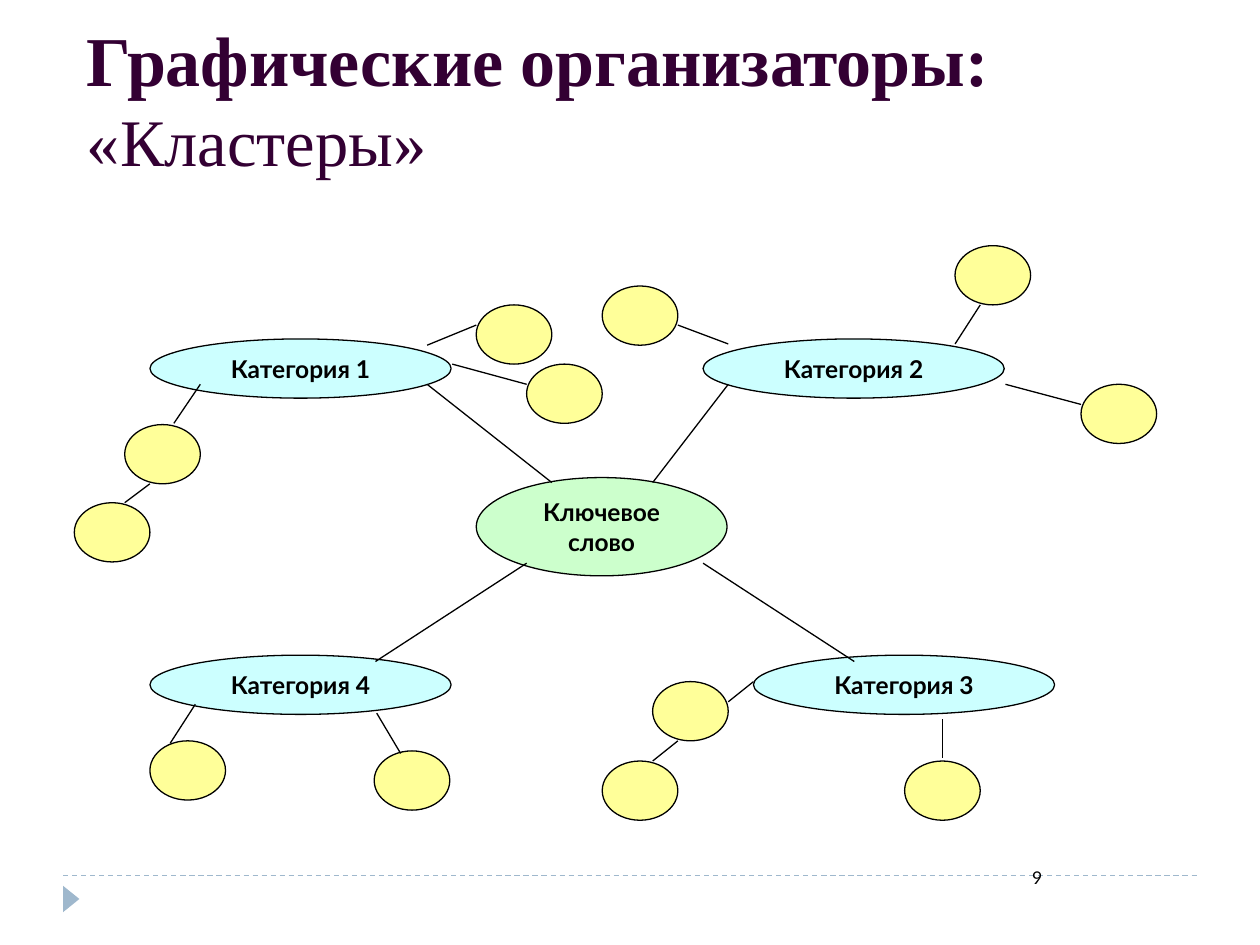
from pptx import Presentation
from pptx.dml.color import RGBColor
from pptx.enum.dml import MSO_LINE as Dash
from pptx.enum.shapes import MSO_CONNECTOR as Link, MSO_SHAPE as Kind
from pptx.enum.text import MSO_ANCHOR as Anchor, MSO_AUTO_SIZE as Fit, PP_ALIGN as Align
from pptx.util import Emu, Pt
from lxml.etree import SubElement

SCALE = 9144
HUES = {"ink": "000000", "title": "330033", "trim": "9FB8CD", "key": "CCFFCC",
        "group": "CCFFFF", "leaf": "FFFF99"}
GROUPS = [("Категория 1", 119, 269), ("Категория 4", 119, 520),
          ("Категория 3", 598, 520), ("Категория 2", 558, 269)]
LEAVES = [(99, 337), (59, 399), (297, 596), (119, 588), (478, 604), (518, 541),
          (718, 604), (858, 305), (418, 289), (478, 227), (758, 195), (378, 242)]
LINKS = [(339, 305, 438, 383), (578, 305, 518, 383), (558, 447, 678, 525),
         (418, 447, 298, 525), (159, 305, 138, 336), (119, 384, 99, 399),
         (339, 274, 378, 258), (359, 289, 418, 305), (538, 258, 578, 273),
         (778, 242, 758, 273), (858, 321, 798, 305), (155, 559, 135, 590),
         (578, 557, 598, 541), (518, 604, 538, 588), (748, 571, 748, 602),
         (299, 566, 318, 598)]


def px(*sizes):
    return [Emu(size * SCALE) for size in sizes]


def hue(name):
    return RGBColor.from_string(HUES[name])


class Deck:
    """Holds the style and the current slide, and draws each kind of element."""

    def __init__(self, wide, high):
        self.show = Presentation()
        self.show.slide_width, self.show.slide_height = px(wide, high)
        self.slide = self.show.slides.add_slide(self.show.slide_layouts[5])
        self.face, self.serif = "Lato", "Times New Roman"

    def font(self, font, size, bold=False, face=None, color="ink"):
        font.name, font.size, font.bold = face or self.face, Pt(size), bold
        font.color.rgb = hue(color)

    def title(self, head, tail, box):
        shape = self.slide.shapes.title
        shape.left, shape.top, shape.width, shape.height = px(*box)
        frame = shape.text_frame
        frame.auto_size, frame.vertical_anchor = Fit.NONE, Anchor.BOTTOM
        par = frame.paragraphs[0]
        par.alignment = Align.LEFT
        for text, size, bold in ((head, 40, True), (tail, 38, False)):
            if par.runs:
                par.add_line_break()
            run = par.add_run()
            run.text = text
            self.font(run.font, size, bold, self.serif, "title")

    def shape(self, kind, box, fill, line=None):
        shape = self.slide.shapes.add_shape(kind, *px(*box))
        shape.shadow.inherit = False
        shape.fill.solid()
        shape.fill.fore_color.rgb = hue(fill)
        if line:
            shape.line.color.rgb = hue(line)
            shape.line.width = Pt(0.75)
        else:
            shape.line.fill.background()
        return shape

    def oval(self, box, fill, text=None):
        shape = self.shape(Kind.OVAL, box, fill, "ink")
        if text:
            par = shape.text_frame.paragraphs[0]
            par.text, par.alignment = text, Align.CENTER
            self.font(par.font, 14, True)

    def line(self, ends, color="ink", dash=None):
        line = self.slide.shapes.add_connector(Link.STRAIGHT, *px(*ends))
        line.line.color.rgb = hue(color)
        line.line.width = Pt(0.75)
        if dash:
            line.line.dash_style = dash
        props = line.element.spPr
        SubElement(props, "{%s}effectLst" % props.nsmap["a"])

    def note(self, text, box):
        frame = self.slide.shapes.add_textbox(*px(*box)).text_frame
        frame.word_wrap = True
        par = frame.paragraphs[0]
        par.text, par.alignment = text, Align.RIGHT
        self.font(par.font, 10)


def main():
    deck = Deck(1000, 750)
    deck.line((50, 695, 950, 695), "trim", Dash.DASH)
    deck.shape(Kind.ISOSCELES_TRIANGLE, (46, 707, 21, 13), "trim").rotation = 90
    deck.note("9", (681, 683, 156, 50))
    deck.oval((378, 379, 199, 78), "key", "Ключевое слово")
    for text, left, top in GROUPS:
        deck.oval((left, top, 239, 47), "group", text)
    for left, top in LEAVES:
        deck.oval((left, top, 60, 47), "leaf")
    for ends in LINKS:
        deck.line(ends)
    deck.title("Графические организаторы:", "«Кластеры»", (59, 29, 882, 119))
    deck.show.save("out.pptx")


if __name__ == "__main__":
    main()
